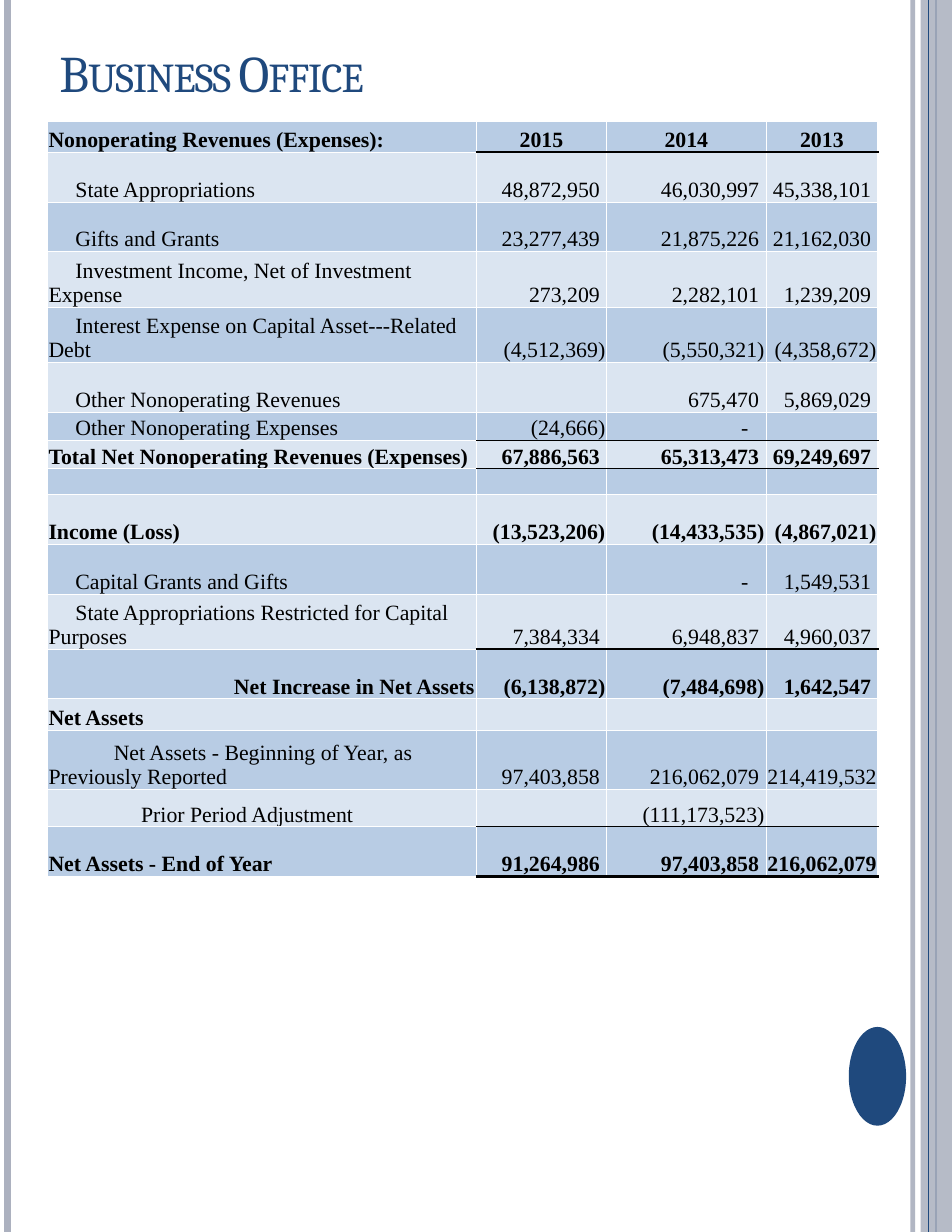
from lxml import etree
from pptx import Presentation
from pptx import util as u
from pptx.dml.color import RGBColor
from pptx.enum import shapes, text
from pptx.oxml import ns

COLORS = {"navy": "1F497D", "gray": "ACB1BF", "black": "000000",
          "white": "FFFFFF", "dark band": "B8CCE4", "light band": "DBE5F1"}
SERIF = "Times New Roman"


def write(frame, content, size=14, font=SERIF, color="black", bold=False,
          align=text.PP_ALIGN.LEFT, indent=0, small_caps=False):
    """Put one formatted paragraph into a text frame; indent is first-line, in cm."""
    frame.word_wrap = True
    paragraph = frame.paragraphs[0]
    paragraph.alignment = align
    if indent:
        paragraph._p.get_or_add_pPr().set("indent", str(u.Cm(indent)))
    if not content:
        end = etree.SubElement(paragraph._p, ns.qn("a:endParaRPr"))
        end.set("sz", str(size * 100))
        return
    run = paragraph.add_run()
    run.text = content
    run.font.size = u.Pt(size)
    run.font.name = font
    run.font.bold = bold
    run.font.color.rgb = RGBColor.from_string(COLORS[color])
    if small_caps:
        run._r.get_or_add_rPr().set("cap", "small")
        run._r.get_or_add_rPr().set("spc", "-60")


def paint(fill, color, opacity=100):
    fill.solid()
    fill.fore_color.rgb = RGBColor.from_string(COLORS[color])
    if opacity < 100:
        srgb = fill._xPr.find(".//" + ns.qn("a:srgbClr"))
        etree.SubElement(srgb, ns.qn("a:alpha")).set("val", str(opacity * 1000))


presentation = Presentation()
presentation.slide_width, presentation.slide_height = u.Cm(21.59), u.Cm(27.94)
slide = presentation.slides.add_slide(presentation.slide_layouts[6])

# Side decoration, back to front: kind, then its place and look
decoration = [
    ("line", 20.7, "gray", 3, 93),
    ("line", 0.18, "gray", 4.5, 100),
    ("line", 21.23, "navy", 1.5, 100),
    ("shape", shapes.MSO_SHAPE.RECTANGLE, (20.88, 0, 0.71, 27.94), "gray", 87),
    ("line", 21.06, "navy", 0.75, 100),
    ("shape", shapes.MSO_SHAPE.OVAL, (19.25, 23.29, 1.3, 2.24), "navy", 100),
]
for kind, *details in decoration:
    if kind == "line":
        x, color, width, opacity = details
        line = slide.shapes.add_connector(
            shapes.MSO_CONNECTOR.STRAIGHT, u.Cm(x), 0, u.Cm(x), presentation.slide_height)
        line.line.width = u.Pt(width)
        paint(line.line.fill, color, opacity)
        etree.SubElement(line._element.spPr, ns.qn("a:effectLst"))
    else:
        preset, box, color, opacity = details
        shape = slide.shapes.add_shape(preset, *map(u.Cm, box))
        shape.shadow.inherit = False
        shape.line.fill.background()
        paint(shape.fill, color, opacity)

title = slide.shapes.add_textbox(u.Cm(1.07), u.Cm(0.64), u.Cm(17.63), u.Cm(1.85))
frame = title.text_frame
frame.vertical_anchor = text.MSO_ANCHOR.BOTTOM
frame.margin_left = frame.margin_right = u.Cm(0.28)
frame.margin_top = frame.margin_bottom = u.Cm(0.15)
write(frame, "Business Office", size=33, font="Cambria", color="navy", small_caps=True)

# Height (cm), style, label, 2015, 2014, 2013
statement = [
    (0.7, "head", "Nonoperating Revenues (Expenses):", "2015", "2014", "2013"),
    (1.13, "item", "State Appropriations", "48,872,950", "46,030,997", "45,338,101"),
    (1.13, "item", "Gifts and Grants", "23,277,439", "21,875,226", "21,162,030"),
    (1.27, "item", "Investment Income, Net of Investment Expense",
     "273,209", "2,282,101", "1,239,209"),
    (1.13, "item", "Interest Expense on Capital Asset---Related Debt",
     "(4,512,369)", "(5,550,321)", "(4,358,672)"),
    (1.13, "item", "Other Nonoperating Revenues", "", "675,470", "5,869,029"),
    (0.63, "item", "Other Nonoperating Expenses", "(24,666)", "-", ""),
    (0.63, "total", "Total Net Nonoperating Revenues (Expenses)",
     "67,886,563", "65,313,473", "69,249,697"),
    (0.59, "item", "", "", "", ""),
    (1.13, "total", "Income (Loss)", "(13,523,206)", "(14,433,535)", "(4,867,021)"),
    (1.13, "item", "Capital Grants and Gifts", "", "-", "1,549,531"),
    (1.24, "item", "State Appropriations Restricted for Capital Purposes",
     "7,384,334", "6,948,837", "4,960,037"),
    (1.13, "net", "Net Increase in Net Assets", "(6,138,872)", "(7,484,698)", "1,642,547"),
    (0.71, "total", "Net Assets", "", "", ""),
    (1.35, "balance", "Net Assets - Beginning of Year, as Previously Reported",
     "97,403,858", "216,062,079", "214,419,532"),
    (0.84, "adjustment", "Prior Period Adjustment", "", "(111,173,523)", ""),
    (1.13, "total", "Net Assets - End of Year", "91,264,986", "97,403,858", "216,062,079"),
]
indents = {"item": 0.61, "balance": 1.48, "adjustment": 2.1}
bold_styles = {"head", "total", "net"}
rule_widths = {0: 1, 6: 1, 7: 1, 11: 1, 15: 1, 16: 2}  # black rule below these rows
column_widths = [9.73, 2.96, 3.61, 2.54]

graphic = slide.shapes.add_table(
    len(statement), len(column_widths), u.Cm(1.07), u.Cm(2.75),
    u.Cm(sum(column_widths)), u.Cm(sum(row[0] for row in statement)))
table = graphic.table
table.first_row = table.horz_banding = False
for column, width in zip(table.columns, column_widths):
    column.width = u.Cm(width)

for row_index, (height, style, *values) in enumerate(statement):
    table.rows[row_index].height = u.Cm(height)
    for column_index, value in enumerate(values):
        cell = table.cell(row_index, column_index)
        cell.vertical_anchor = text.MSO_ANCHOR.BOTTOM
        cell.margin_left = cell.margin_right = u.Cm(0.03)
        cell.margin_top, cell.margin_bottom = u.Cm(0.05), 0

        is_number = column_index > 0
        if is_number and style == "head":
            align = text.PP_ALIGN.CENTER
        elif is_number or style == "net":
            align = text.PP_ALIGN.RIGHT
        else:
            align = text.PP_ALIGN.LEFT
        if value == "-":
            cell.margin_right = u.Cm(0.4)
        elif is_number and value[-1:].isdigit() and style != "head":
            value += " "  # lines digits up with the bracketed amounts
        write(cell.text_frame, value, size=14 if value else 12, align=align,
              bold=style in bold_styles, indent=0 if is_number else indents.get(style, 0))

        edges = {"lnL": 0, "lnR": 0, "lnT": rule_widths.get(row_index - 1, 0),
                 "lnB": rule_widths.get(row_index, 0)}
        if column_index == 0:
            del edges["lnL"]
        if column_index == len(column_widths) - 1:
            del edges["lnR"]
        properties = cell._tc.get_or_add_tcPr()
        for edge, rule in edges.items():
            rule = rule if is_number else 0
            border = etree.SubElement(properties, ns.qn("a:" + edge))
            border.set("w", str(u.Pt(rule or 0.5)))
            solid = etree.SubElement(border, ns.qn("a:solidFill"))
            color = COLORS["black" if rule else "white"]
            etree.SubElement(solid, ns.qn("a:srgbClr")).set("val", color)
        paint(cell.fill, "light band" if row_index % 2 else "dark band")

presentation.save("out.pptx")
